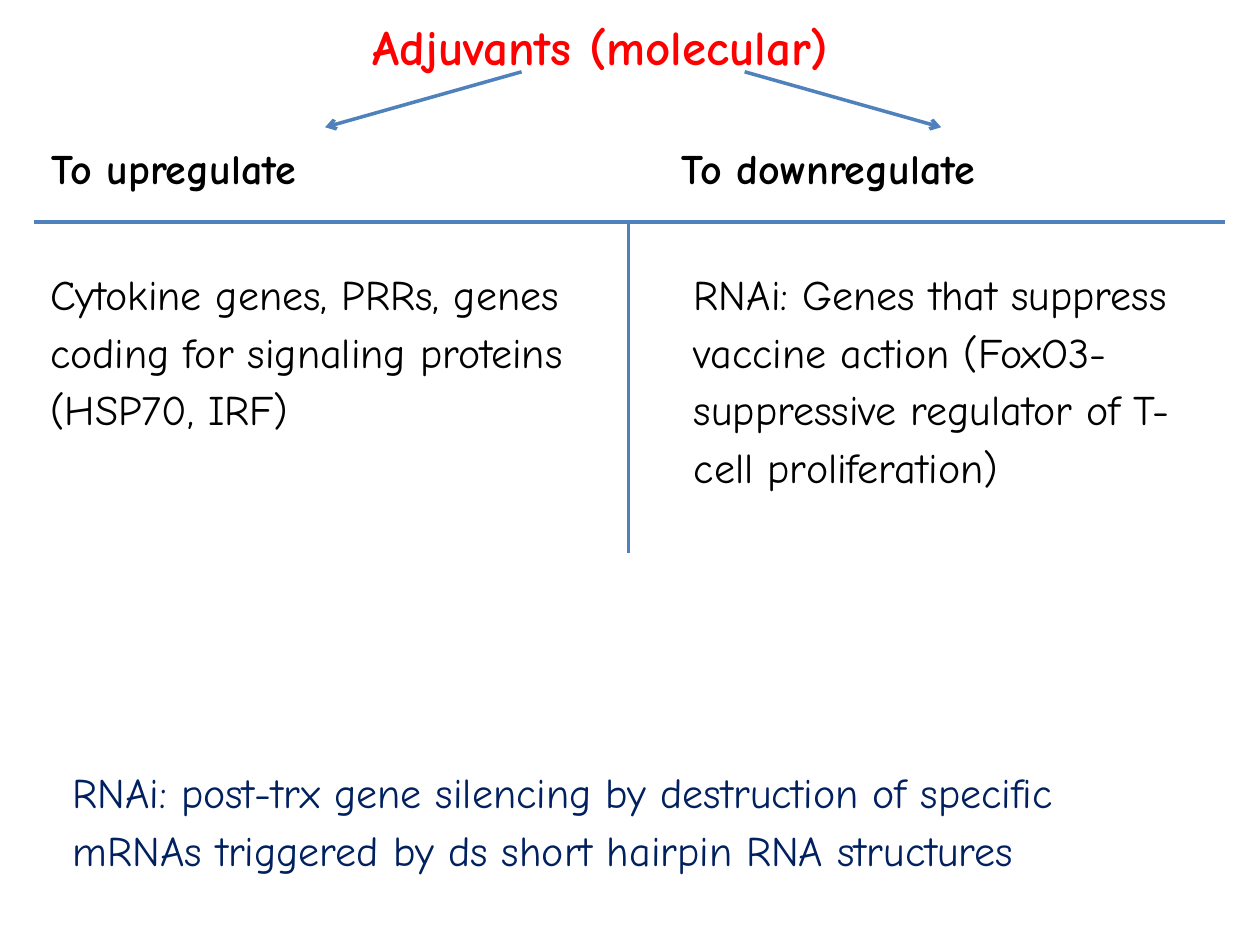
from typing import NamedTuple, Optional

from lxml import etree
from pptx import Presentation
from pptx import util as u
from pptx.dml.color import RGBColor
from pptx.enum import shapes, text
from pptx.oxml import ns

PX = 9144
FONT = "Comic Neue"
RED = RGBColor(0xFF, 0x00, 0x00)
BLACK = RGBColor(0x00, 0x00, 0x00)
NAVY = RGBColor(0x00, 0x20, 0x60)
BLUE = RGBColor(0x4F, 0x81, 0xBD)


class TextBlock(NamedTuple):
    left: int
    top: int
    width: int
    height: int
    wording: str
    color: RGBColor = BLACK
    size: int = 24
    bold: bool = False
    line_spacing: Optional[float] = 32.8
    tab_stop: Optional[int] = None


class Line(NamedTuple):
    start_x: int
    start_y: int
    end_x: int
    end_y: int
    arrow: bool = False


TEXT_BLOCKS = [
    TextBlock(286, 8, 428, 57, "Adjuvants (molecular)", RED, 28, True, None),
    TextBlock(31, 103, 990, 56, "To upregulate\tTo downregulate",
              bold=True, tab_stop=500),
    TextBlock(30, 203, 457, 149,
              "Cytokine genes, PRRs, genes coding for signaling proteins (HSP70, IRF)"),
    TextBlock(541, 203, 414, 242,
              "RNAi: Genes that suppress vaccine action (FoxO3- suppressive "
              "regulator of T-cell proliferation)"),
    TextBlock(48, 598, 903, 103,
              "RNAi: post-trx gene silencing by destruction of specific mRNAs "
              "triggered by ds short hairpin RNA structures", NAVY),
]

LINES = [
    Line(414, 57, 258, 101, arrow=True),
    Line(591, 57, 747, 101, arrow=True),
    Line(499, 176, 499, 439),
    Line(27, 176, 972, 176),
]


def set_values(target: object, values: dict) -> None:
    for name, value in values.items():
        setattr(target, name, value)


def add_text(slide, block: TextBlock) -> None:
    shape = slide.shapes.add_textbox(*(value * PX for value in block[:4]))
    set_values(shape.text_frame, {
        "word_wrap": True,
        "auto_size": text.MSO_AUTO_SIZE.SHAPE_TO_FIT_TEXT,
    })
    paragraph = shape.text_frame.paragraphs[0]
    if block.line_spacing is not None:
        paragraph.line_spacing = u.Pt(block.line_spacing)
    if block.tab_stop is not None:
        properties = paragraph._p.get_or_add_pPr()
        tabs = etree.SubElement(properties, ns.qn("a:tabLst"))
        etree.SubElement(tabs, ns.qn("a:tab"),
                         pos=str(block.tab_stop * PX), algn="l")
    run = paragraph.add_run()
    run.text = block.wording
    set_values(run.font, {"name": FONT, "size": u.Pt(block.size), "bold": block.bold})
    run.font.color.rgb = block.color


def add_line(slide, line: Line) -> None:
    connector = slide.shapes.add_connector(
        shapes.MSO_CONNECTOR.STRAIGHT, *(value * PX for value in line[:4]))
    connector.line.width = u.Pt(2)
    connector.line.color.rgb = BLUE
    if line.arrow:
        etree.SubElement(connector.line._get_or_add_ln(), ns.qn("a:tailEnd"), type="arrow")
    etree.SubElement(connector._element.spPr, ns.qn("a:effectLst"))


def main() -> None:
    presentation = Presentation()
    set_values(presentation, {"slide_width": 1000 * PX, "slide_height": 750 * PX})
    slide = presentation.slides.add_slide(presentation.slide_layouts[6])
    for block in TEXT_BLOCKS:
        add_text(slide, block)
    for line in LINES:
        add_line(slide, line)
    presentation.save("out.pptx")


if __name__ == "__main__":
    main()
